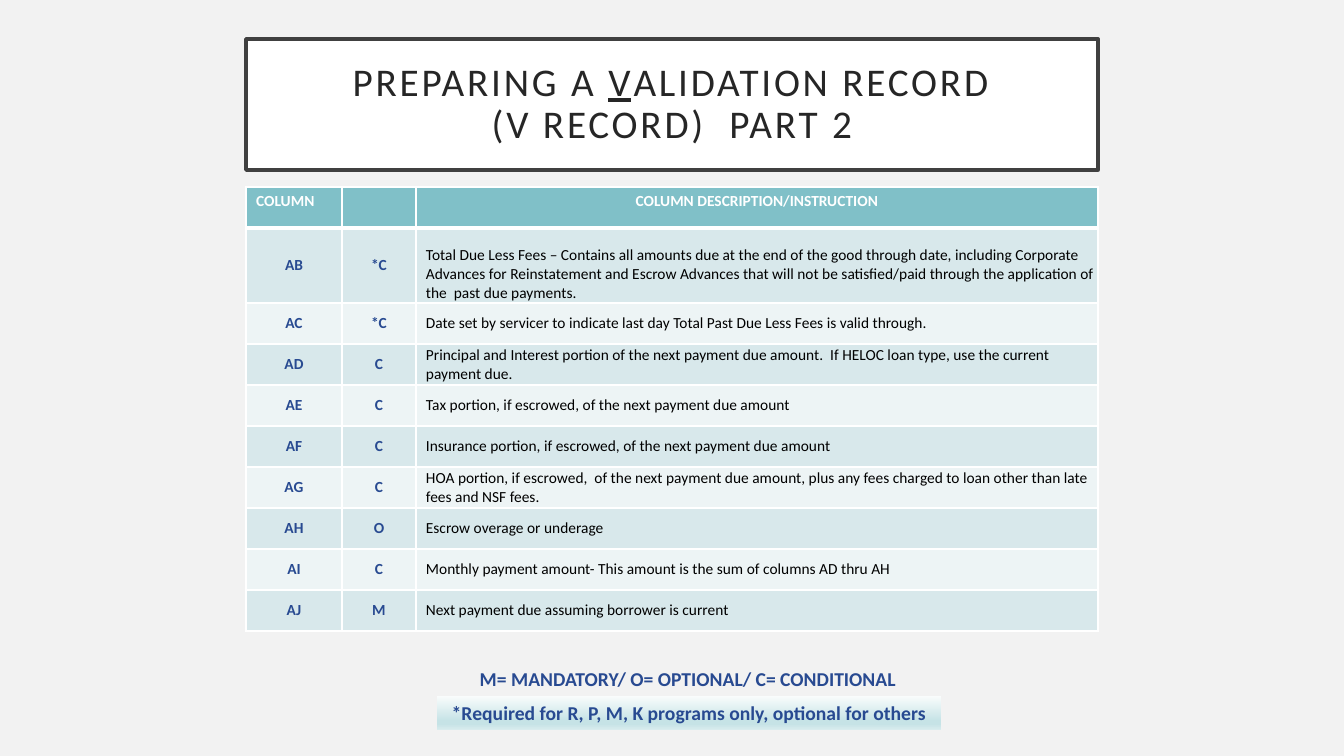
from lxml import etree
from pptx import Presentation
from pptx import util as u
from pptx.dml.color import RGBColor
from pptx.enum import shapes, text
from pptx.oxml import parse_xml
from pptx.oxml.ns import nsdecls, qn

TITLE = [[(" PREPARING A ", False), ("V", True), ("ALIDATION RECORD ", False)],
         [("(V RECORD)  PART 2", False)]]
HEADINGS = ("COLUMN", "", "COLUMN DESCRIPTION/INSTRUCTION")
RECORDS = [
    ("AB", "*C", "Total Due Less Fees – Contains all amounts due at the end of the good through date, "
     "including Corporate Advances for Reinstatement and Escrow Advances that will not be "
     "satisfied/paid through the application of the  past due payments."),
    ("AC", "*C", "Date set by servicer to indicate last day Total Past Due Less Fees is valid through."),
    ("AD", "C", "Principal and Interest portion of the next payment due amount.  If HELOC loan type, "
     "use the current payment due."),
    ("AE", "C", "Tax portion, if escrowed, of the next payment due amount"),
    ("AF", "C", "Insurance portion, if escrowed, of the next payment due amount"),
    ("AG", "C", "HOA portion, if escrowed,  of the next payment due amount, plus any fees charged "
     "to loan other than late fees and NSF fees."),
    ("AH", "O", "Escrow overage or underage"),
    ("AI", "C", "Monthly payment amount- This amount is the sum of columns AD thru AH"),
    ("AJ", "M", "Next payment due assuming borrower is current"),
]
LEGEND = "M= MANDATORY/ O= OPTIONAL/ C= CONDITIONAL"
FOOTNOTE = "*Required for R, P, M, K programs only, optional for others"
FOOTNOTE_STOPS = [(0, "F9FCFC"), (74, "C6E3E6"), (83, "C6E3E6"), (100, "D9ECEE")]

FONT = "Calibri"
BACKGROUND = RGBColor(0xF2, 0xF2, 0xF2)
WHITE = RGBColor(0xFF, 0xFF, 0xFF)
BLACK = RGBColor(0, 0, 0)
FRAME = RGBColor(0x40, 0x40, 0x40)
TITLE_INK = RGBColor(0x26, 0x26, 0x26)
NAVY = RGBColor(0x28, 0x4A, 0x91)
TEAL = RGBColor(0x80, 0xC0, 0xC8)
BANDS = (RGBColor(0xD8, 0xE8, 0xEB), RGBColor(0xED, 0xF4, 0xF5))

LEFT, WIDTH = 246, 852
COLUMN_WIDTHS = (96, 74, 682)
ROW_HEIGHT, TALL_ROW_HEIGHT = 41, 75


def px(n):
    return u.Emu(round(n * 914400 / 100.8))


def style(run, size, color, bold=False):
    run.font.name = FONT
    run.font.size = u.Pt(size)
    run.font.bold = bold
    run.font.color.rgb = color


def set_borders(cell, bottom_pt):
    """White cell edges; must run before the cell fill is set."""
    for side, points in (("L", 1), ("R", 1), ("T", 1), ("B", bottom_pt)):
        cell._tc.get_or_add_tcPr().append(parse_xml(
            f'<a:ln{side} {nsdecls("a")} w="{u.Pt(points)}"><a:solidFill>'
            f'<a:srgbClr val="{WHITE}"/></a:solidFill></a:ln{side}>'))


def add_title(slide):
    title = slide.shapes.add_shape(shapes.MSO_SHAPE.RECTANGLE, px(LEFT), px(39), px(WIDTH), px(131))
    title.shadow.inherit = False
    title.fill.solid()
    title.fill.fore_color.rgb = WHITE
    title.line.color.rgb = FRAME
    title.line.width = u.Pt(2.5)
    frame = title.text_frame
    frame.word_wrap = True
    frame.vertical_anchor = text.MSO_ANCHOR.MIDDLE
    paragraph = frame.paragraphs[0]
    paragraph.alignment = text.PP_ALIGN.CENTER
    paragraph.line_spacing = 0.9
    for number, line in enumerate(TITLE):
        if number:
            paragraph.add_line_break()
        for words, underlined in line:
            run = paragraph.add_run()
            run.text = words
            style(run, 28, TITLE_INK)
            run.font.underline = underlined
            run.font._element.set("spc", "200")


def fill_cell(cell, words, color, bold, align, fill, bottom_pt=1):
    set_borders(cell, bottom_pt)
    cell.fill.solid()
    cell.fill.fore_color.rgb = fill
    cell.text_frame.text = words
    paragraph = cell.text_frame.paragraphs[0]
    paragraph.alignment = align
    paragraph.font.size = u.Pt(11)
    for run in paragraph.runs:
        style(run, 11, color, bold)


def add_records(slide):
    heights = [ROW_HEIGHT, TALL_ROW_HEIGHT] + [ROW_HEIGHT] * (len(RECORDS) - 1)
    table = slide.shapes.add_table(len(heights), len(HEADINGS), px(LEFT), px(187),
                                   px(WIDTH), px(sum(heights))).table
    for column, width in zip(table.columns, COLUMN_WIDTHS):
        column.width = px(width)
    for row, height in zip(table.rows, heights):
        row.height = px(height)

    left, center = text.PP_ALIGN.LEFT, text.PP_ALIGN.CENTER
    for c, heading in enumerate(HEADINGS):
        fill_cell(table.cell(0, c), heading, WHITE, True, center if c else left, TEAL, 3)
    for r, record in enumerate(RECORDS, 1):
        for c, words in enumerate(record):
            cell = table.cell(r, c)
            is_description = c == 2
            fill_cell(cell, words, BLACK if is_description else NAVY, not is_description,
                      left if is_description else center, BANDS[(r - 1) % 2])
            cell.margin_top = cell.margin_bottom = cell.margin_right = 0
            cell.margin_left = px(10) if is_description else 0
            cell.vertical_anchor = text.MSO_ANCHOR.MIDDLE
    table.cell(1, 2).vertical_anchor = text.MSO_ANCHOR.BOTTOM


def add_note(slide, words, x, y, width):
    note = slide.shapes.add_textbox(px(x), px(y), px(width), px(34))
    note.text_frame.word_wrap = True
    note.text_frame.text = words
    paragraph = note.text_frame.paragraphs[0]
    paragraph.alignment = text.PP_ALIGN.CENTER
    style(paragraph.runs[0], 14, NAVY, True)
    return note


def fill_gradient(shape, stops):
    shape.fill.gradient()
    shape.fill.gradient_angle = 270
    stop_list = shape._element.spPr.find(".//" + qn("a:gsLst"))
    for stop in list(stop_list):
        stop_list.remove(stop)
    for percent, color in stops:
        stop = etree.SubElement(stop_list, qn("a:gs"), pos=str(percent * 1000))
        etree.SubElement(stop, qn("a:srgbClr"), val=color)


def main():
    deck = Presentation()
    deck.slide_width, deck.slide_height = px(1344), px(756)
    slide = deck.slides.add_slide(deck.slide_layouts[6])
    slide.background.fill.solid()
    slide.background.fill.fore_color.rgb = BACKGROUND
    add_title(slide)
    add_records(slide)
    add_note(slide, LEGEND, 352, 662, 672)
    fill_gradient(add_note(slide, FOOTNOTE, 437, 696, 504), FOOTNOTE_STOPS)
    deck.save("out.pptx")


if __name__ == "__main__":
    main()
